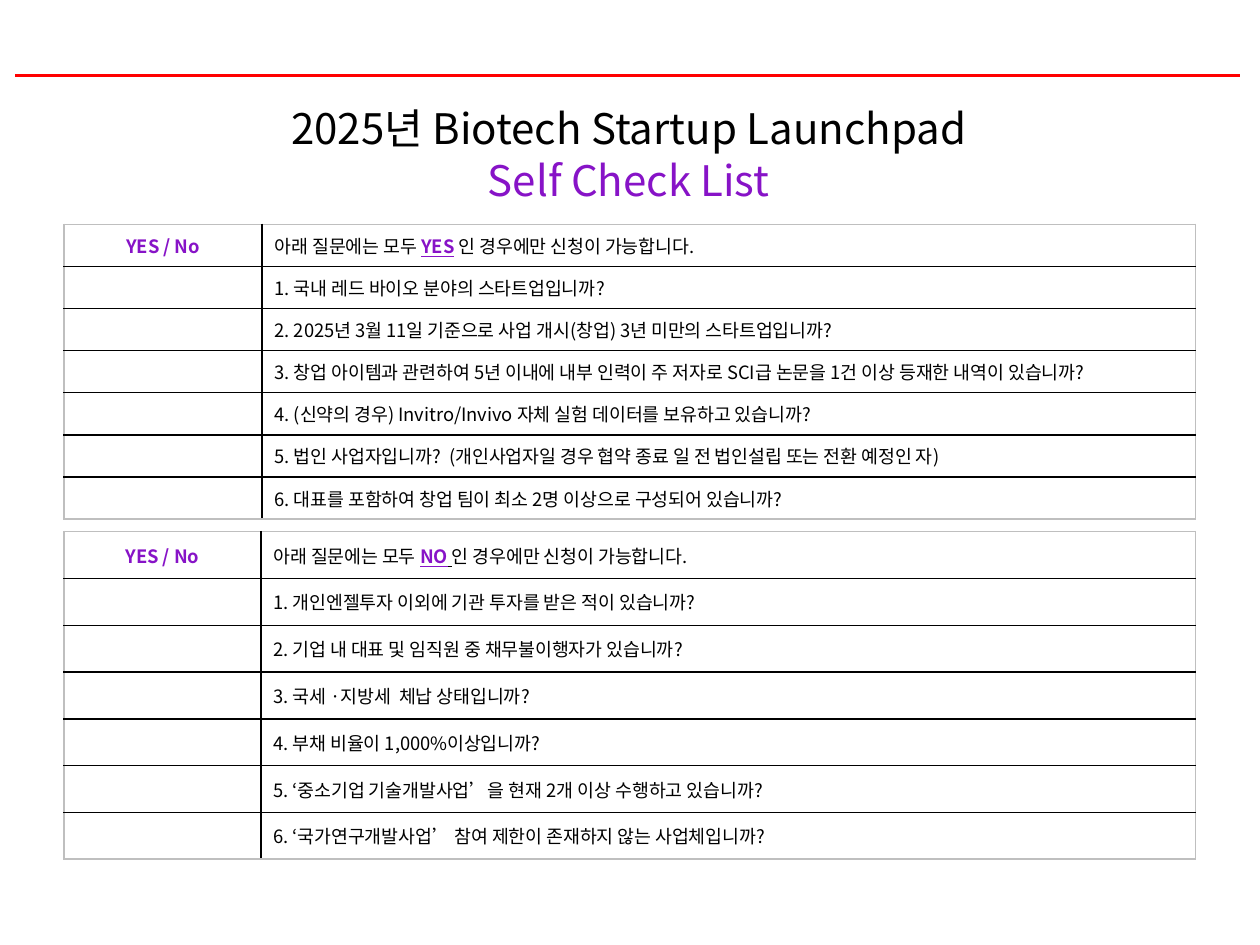
import lxml.etree
import pptx
import pptx.dml.color
import pptx.enum.shapes
import pptx.enum.text
import pptx.oxml.ns
import pptx.util

Inches = pptx.util.Inches
Pt = pptx.util.Pt
RGBColor = pptx.dml.color.RGBColor
qn = pptx.oxml.ns.qn

BLACK = RGBColor(0x00, 0x00, 0x00)
PURPLE = RGBColor(0x87, 0x13, 0xC7)
RED = RGBColor(0xFF, 0x00, 0x00)
GRAY = RGBColor(0xBF, 0xBF, 0xBF)
FONT = "Noto Sans CJK KR"
TABLE_SIZE = 10.5
CENTER = pptx.enum.text.PP_ALIGN.CENTER
MIDDLE = pptx.enum.text.MSO_ANCHOR.MIDDLE

YES_QUESTIONS = [
    "1. 국내 레드 바이오 분야의 스타트업입니까?",
    "2. 2025년 3월 11일 기준으로 사업 개시(창업) 3년 미만의 스타트업입니까?",
    "3. 창업 아이템과 관련하여 5년 이내에 내부 인력이 주 저자로 SCI급 논문을 1건 이상 등재한 내역이 있습니까?",
    "4. (신약의 경우) Invitro/Invivo 자체 실험 데이터를 보유하고 있습니까?",
    "5. 법인 사업자입니까?  (개인사업자일 경우 협약 종료 일 전 법인설립 또는 전환 예정인 자)",
    "6. 대표를 포함하여 창업 팀이 최소 2명 이상으로 구성되어 있습니까?",
]
NO_QUESTIONS = [
    "1. 개인엔젤투자 이외에 기관 투자를 받은 적이 있습니까?",
    "2. 기업 내 대표 및 임직원 중 채무불이행자가 있습니까?",
    "3. 국세 ·지방세  체납 상태입니까?",
    "4. 부채 비율이 1,000%이상입니까?",
    "5. ‘중소기업 기술개발사업’을 현재 2개 이상 수행하고 있습니까?",
    "6. ‘국가연구개발사업’ 참여 제한이 존재하지 않는 사업체입니까?",
]


def add_run(paragraph, text, size, color=BLACK, bold=False, underline=False):
    """Append a run in the slide font, for Latin and Korean alike."""
    run = paragraph.add_run()
    run.text = text
    run.font.size = Pt(size)
    run.font.name = FONT
    run.font.bold = bold
    run.font.underline = underline
    run.font.color.rgb = color
    east_asian = lxml.etree.SubElement(run.font._element, qn("a:ea"))
    east_asian.set("typeface", FONT)


def set_borders(cell, colors):
    """Draw the left, right, top and bottom borders of a cell."""
    properties = cell._tc.get_or_add_tcPr()
    for index, (side, color) in enumerate(zip("LRTB", colors)):
        line = lxml.etree.Element(qn("a:ln" + side), w=str(Pt(1)))
        fill = lxml.etree.SubElement(line, qn("a:solidFill"))
        lxml.etree.SubElement(fill, qn("a:srgbClr"), val=str(color))
        properties.insert(index, line)


def add_top_rule(slide, left, top, width):
    """Draw the red rule across the top."""
    rule = slide.shapes.add_connector(
        pptx.enum.shapes.MSO_CONNECTOR.STRAIGHT, left, top, left + width, top)
    rule.line.color.rgb = RED
    rule.line.width = Pt(1.5)
    lxml.etree.SubElement(rule._element.spPr, qn("a:effectLst"))


def add_title(slide, left, top, width, height):
    """Write the two centred title lines."""
    frame = slide.shapes.add_textbox(left, top, width, height).text_frame
    frame.word_wrap = True
    frame.vertical_anchor = MIDDLE
    lines = [("2025년 Biotech Startup Launchpad", BLACK), ("Self Check List", PURPLE)]
    for index, (text, color) in enumerate(lines):
        paragraph = frame.add_paragraph() if index else frame.paragraphs[0]
        paragraph.alignment = CENTER
        paragraph.line_spacing = Pt(29.5)
        add_run(paragraph, text, 24, color)


def add_checklist(slide, left, top, width, height, answer_width, answer, questions):
    """Build a checklist table with an answer column and a question column."""
    row_count = len(questions) + 1
    frame = slide.shapes.add_table(row_count, 2, left, top, width, height)
    table = frame.table
    table.first_row = False
    table.horz_banding = False
    table.columns[0].width = answer_width
    table.columns[1].width = width - answer_width
    for row_index, row in enumerate(table.rows):
        row.height = height // row_count
        top_color = BLACK if row_index else GRAY
        bottom_color = BLACK if row_index < row_count - 1 else GRAY
        for column_index, cell in enumerate(row.cells):
            cell.fill.background()
            cell.vertical_anchor = MIDDLE
            sides = (BLACK, GRAY) if column_index else (GRAY, BLACK)
            set_borders(cell, (*sides, top_color, bottom_color))
        answer_paragraph, question_paragraph = (
            cell.text_frame.paragraphs[0] for cell in row.cells)
        answer_paragraph.alignment = CENTER
        if row_index:
            lxml.etree.SubElement(
                answer_paragraph._p, qn("a:endParaRPr"), sz=str(int(TABLE_SIZE * 100)))
            add_run(question_paragraph, questions[row_index - 1], TABLE_SIZE)
        else:
            add_run(answer_paragraph, "YES / No", TABLE_SIZE, PURPLE, bold=True)
            add_run(question_paragraph, "아래 질문에는 모두 ", TABLE_SIZE)
            add_run(question_paragraph, answer, TABLE_SIZE, PURPLE, bold=True, underline=True)
            if answer == "NO":
                add_run(question_paragraph, " ", TABLE_SIZE, underline=True)
                add_run(question_paragraph, "인 경우에만 신청이 가능합니다.", TABLE_SIZE)
            else:
                add_run(question_paragraph, " 인 경우에만 신청이 가능합니다.", TABLE_SIZE)


def main():
    """Build and save the self check list slide."""
    presentation = pptx.Presentation()
    presentation.slide_width = Inches(10)
    presentation.slide_height = Inches(7.5)
    slide = presentation.slides.add_slide(presentation.slide_layouts[6])
    add_top_rule(slide, Inches(0.12), Inches(0.6), Inches(9.72))
    add_checklist(slide, Inches(0.51), Inches(1.78), Inches(8.98), Inches(2.34),
                  Inches(1.57), "YES", YES_QUESTIONS)
    add_title(slide, Inches(-0.01), Inches(0.76), Inches(10), Inches(0.91))
    add_checklist(slide, Inches(0.51), Inches(4.22), Inches(8.98), Inches(2.6),
                  Inches(1.56), "NO", NO_QUESTIONS)
    presentation.save("out.pptx")


if __name__ == "__main__":
    main()
